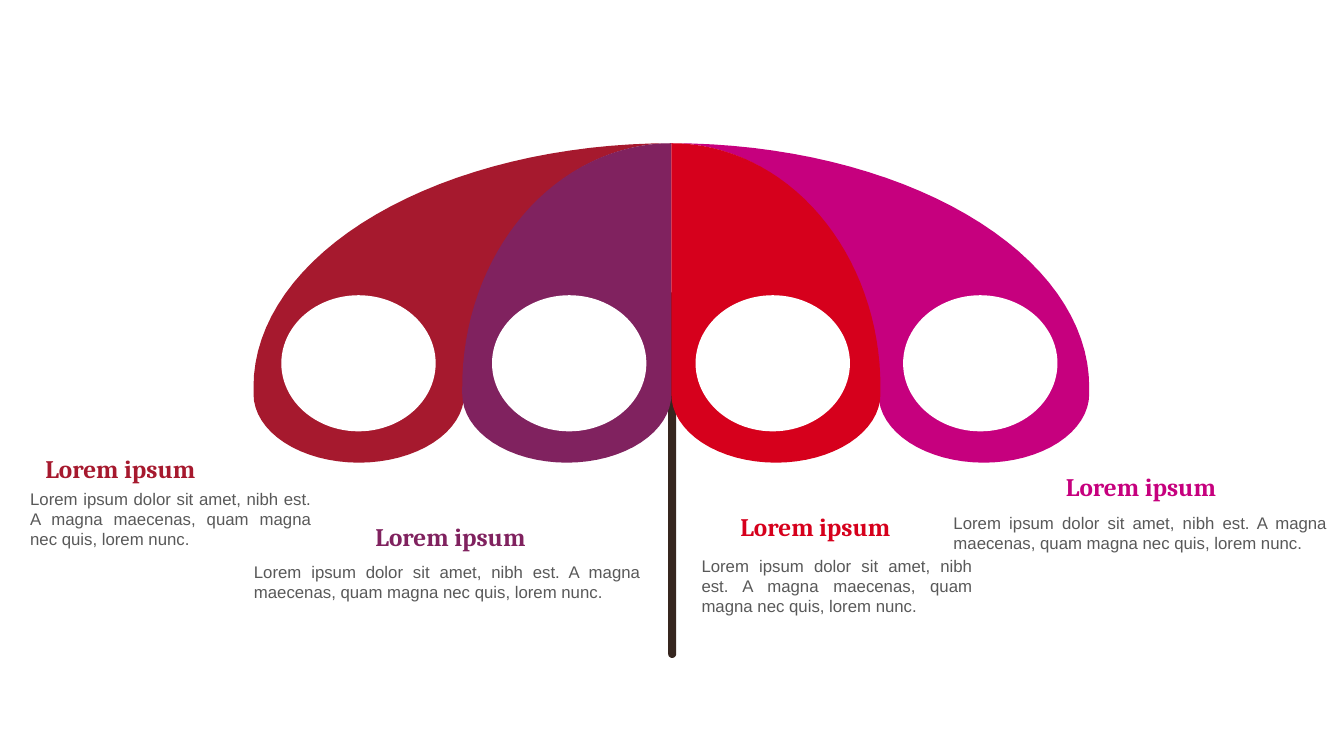
from math import cos, radians, sin

from pptx import Presentation
from pptx.dml.color import RGBColor
from pptx.enum.shapes import MSO_SHAPE
from pptx.enum.text import MSO_ANCHOR, MSO_AUTO_SIZE, PP_ALIGN
from pptx.util import Cm, Pt

ELLIPSE = MSO_SHAPE.OVAL
TOP, BOTTOM = MSO_ANCHOR.TOP, MSO_ANCHOR.BOTTOM
CENTER, JUSTIFY = PP_ALIGN.CENTER, PP_ALIGN.JUSTIFY
GROW = MSO_AUTO_SIZE.SHAPE_TO_FIT_TEXT

CRIMSON, PURPLE, RED, MAGENTA = "A6192E", "80225F", "D6001C", "C6007E"
WHITE, BROWN, GREY = "FFFFFF", "36261F", "595959"

CANOPY_X, CANOPY_Y, CANOPY_HEIGHT = 16.92, 9.75, 6.14
SCALLOP_Y, SCALLOP_HEIGHT = 9.93, 1.73
HANDLE_X, HANDLE_TOP, HANDLE_END, HANDLE_RADIUS = 16.94, 7.37, 16.48, 0.1
WINDOW_TOP, WINDOW_WIDTH, WINDOW_HEIGHT = 7.44, 3.89, 3.43
WINDOW_LEFTS = (7.09, 12.4, 17.53, 22.76)
HEADING_HEIGHT = 1.02

# side (-1 left, 1 right), outer radius, inner radius, colour
PANELS = (
    (-1, 10.53, 5.22, CRIMSON),
    (-1, 5.27, 0, PURPLE),
    (1, 10.53, 5.22, MAGENTA),
    (1, 5.27, 0, RED),
)

HEADING = "Lorem ipsum"
BODY = ("Lorem ipsum dolor sit amet, nibh est. A magna maecenas, "
        "quam magna nec quis, lorem nunc.")
HEADING_FONT = {"name": "Cambria", "size": Pt(18), "bold": True}
BODY_FONT = {"name": "Arial", "size": Pt(12), "bold": False}
FRAME_FORMAT = {
    "word_wrap": True, "auto_size": GROW,
    "margin_left": 0, "margin_right": 0,
    "margin_top": Cm(0.13), "margin_bottom": Cm(0.13),
}

# colour, heading (left, top, width), body (left, top, width, height)
CAPTIONS = (
    (PURPLE, (6.48, 13, 9.75), (6.4, 14.02, 9.75, 1.27)),
    (CRIMSON, (-0.71, 11.3, 7.49), (0.76, 12.19, 7.09, 1.8)),
    (MAGENTA, (23.93, 11.76, 9.65), (24.03, 12.78, 9.42, 1.27)),
    (RED, (16.74, 12.75, 7.62), (17.68, 13.87, 6.83, 1.8)),
)


def colour(value):
    """Return the colour for a hex string."""
    return RGBColor.from_string(value)


def apply_format(target, values):
    """Set each named attribute of the target."""
    for name, value in values.items():
        setattr(target, name, value)


def paint(shape, fill):
    """Give a shape a plain fill with no line or shadow."""
    shape.shadow.inherit = False
    shape.fill.solid()
    shape.fill.fore_color.rgb = colour(fill)
    shape.line.fill.background()


def arc(center, radii, start, end, steps=32):
    """Return points along an elliptical arc, with angles in degrees."""
    angles = [radians(start + (end - start) * step / steps)
              for step in range(steps + 1)]
    return [(center[0] + radii[0] * cos(angle),
             center[1] + radii[1] * sin(angle)) for angle in angles]


def add_outline(shapes, points, fill):
    """Draw a closed outline through points given in centimetres."""
    start, *rest = [(Cm(x), Cm(y)) for x, y in points]
    builder = shapes.build_freeform(*start, scale=1.0)
    builder.add_line_segments(rest, close=True)
    paint(builder.convert_to_shape(), fill)


def add_handle(shapes):
    """Draw the umbrella handle with its rounded end."""
    tip = arc((HANDLE_X, HANDLE_END), (HANDLE_RADIUS, HANDLE_RADIUS), 0, 180, 12)
    top = [(HANDLE_X - HANDLE_RADIUS, HANDLE_TOP),
           (HANDLE_X + HANDLE_RADIUS, HANDLE_TOP)]
    add_outline(shapes, top + tip, BROWN)


def add_panel(shapes, side, outer, inner, fill):
    """Draw one canopy panel between two radii, with a scalloped hem."""
    crown = (CANOPY_X, CANOPY_Y)
    hem = (CANOPY_X + side * (outer + inner) / 2, SCALLOP_Y)
    points = arc(crown, (side * outer, CANOPY_HEIGHT), -90, 0)
    points += arc(hem, (side * (outer - inner) / 2, SCALLOP_HEIGHT), 0, 180)
    points += arc(crown, (side * inner, CANOPY_HEIGHT), 0, -90)
    add_outline(shapes, points, fill)


def add_window(shapes, left):
    """Draw the white ellipse inside a panel."""
    window = shapes.add_shape(ELLIPSE, Cm(left), Cm(WINDOW_TOP),
                              Cm(WINDOW_WIDTH), Cm(WINDOW_HEIGHT))
    paint(window, WHITE)


def add_text(shapes, place, text, font, fill, align, anchor):
    """Add a text box holding one formatted paragraph."""
    box = shapes.add_textbox(*[Cm(length) for length in place])
    frame = box.text_frame
    apply_format(frame, FRAME_FORMAT)
    frame.vertical_anchor = anchor
    para = frame.paragraphs[0]
    para.alignment = align
    span = para.add_run()
    span.text = text
    apply_format(span.font, font)
    span.font.color.rgb = colour(fill)


def add_caption(shapes, fill, heading_place, body_place):
    """Add a coloured heading and the body text below it."""
    add_text(shapes, (*heading_place, HEADING_HEIGHT), HEADING,
             HEADING_FONT, fill, CENTER, BOTTOM)
    add_text(shapes, body_place, BODY, BODY_FONT, GREY, JUSTIFY, TOP)


def main():
    """Build the umbrella slide and save the deck."""
    deck = Presentation()
    deck.slide_width, deck.slide_height = Cm(33.87), Cm(19.05)
    page = deck.slides.add_slide(deck.slide_layouts[6])
    add_handle(page.shapes)
    canopy = page.shapes.add_group_shape().shapes
    for panel in PANELS:
        add_panel(canopy, *panel)
    for left in WINDOW_LEFTS:
        add_window(canopy, left)
    for caption in CAPTIONS:
        add_caption(page.shapes.add_group_shape().shapes, *caption)
    deck.save("out.pptx")


if __name__ == "__main__":
    main()
